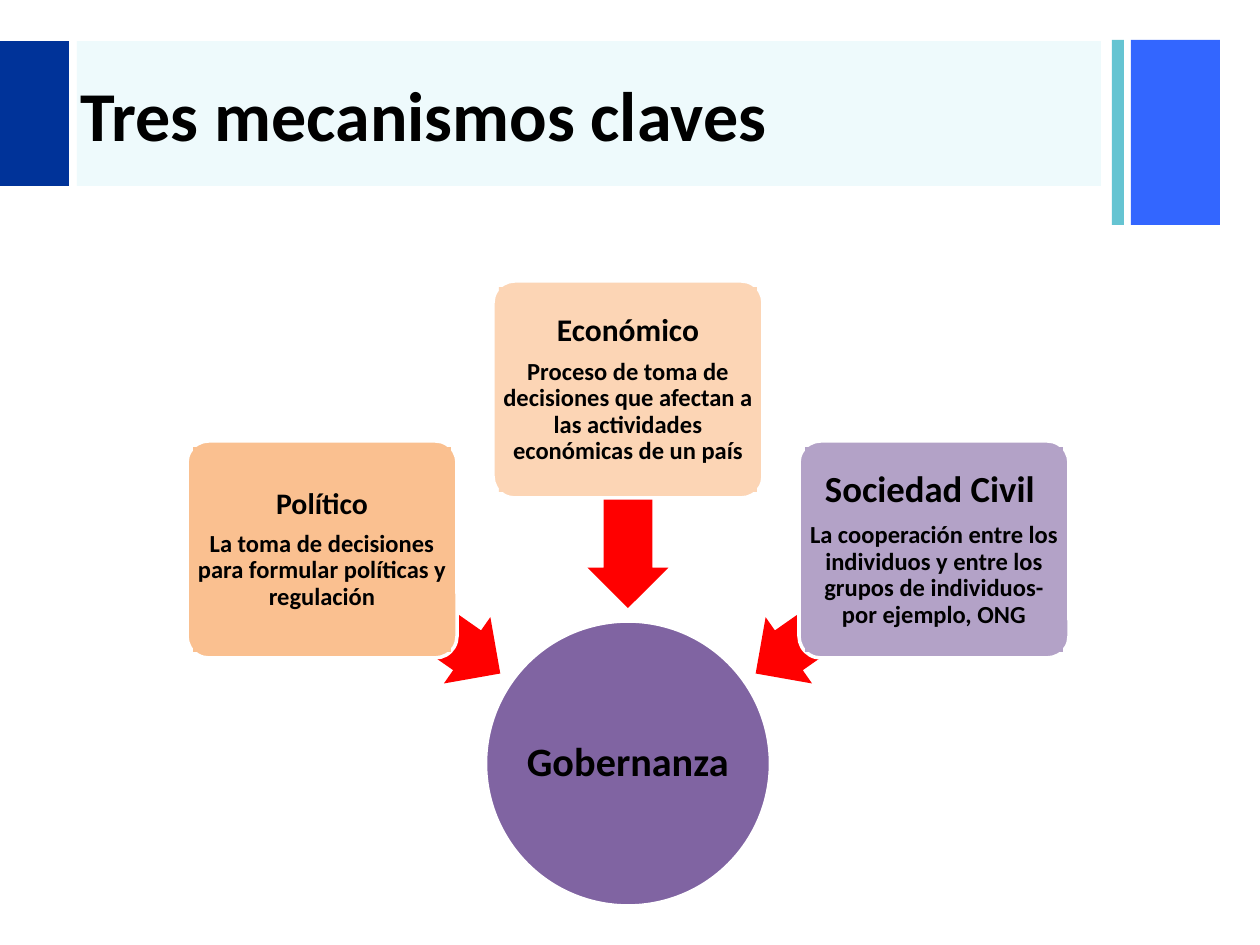
from pptx import Presentation
from pptx.dml.color import RGBColor
from pptx.enum.shapes import MSO_SHAPE
from pptx.enum.text import MSO_ANCHOR, PP_ALIGN
from pptx.util import Emu, Pt

EMU_PER_PX = 914400 / 126
FONT = "Calibri"
COLORS = {
    "text": "000000", "outline": "FFFFFF",
    "navy": "003399", "pale": "EEFAFC", "teal": "65C4D2", "blue": "3366FF",
    "arrow": "FF0000", "circle": "8064A2",
    "orange": "FAC090", "peach": "FCD5B5", "lilac": "B3A2C7",
}

# Decorative header: left, top, width, height, colour
HEADER_BARS = [
    (1131, 40, 89, 185, "blue"),
    (1112, 40, 12, 185, "teal"),
    (77, 41, 1024, 145, "pale"),
    (0, 41, 69, 145, "navy"),
]

# Every mechanism is placed around the vertical axis of the circle
AXIS = 628
CARD_W, CARD_H, CARD_INSET = 270, 217, 6
ARROW_W, ARROW_H = 218, 81
CIRCLE_TOP, CIRCLE_SIZE, LABEL_INSET = 621, 285, 36

# Card offset, card top, colour, arrow offset, arrow middle, rotation,
# margin, heading, heading size, description
MECHANISMS = [
    (-306, 441, "orange", -217, 611, 215, 4, "Político", 17,
     "La toma de decisiones para formular políticas y regulación"),
    (0, 281, "peach", 0, 499, 270, 0, "Económico", 18,
     "Proceso de toma de decisiones que afectan a las actividades "
     "económicas de un país"),
    (306, 441, "lilac", 217, 611, 325, 4, "Sociedad Civil ", 21,
     "La cooperación entre los individuos y entre los grupos de "
     "individuos-por ejemplo, ONG"),
]


def px(length):
    return Emu(round(length * EMU_PER_PX))


def rgb(name):
    return RGBColor.from_string(COLORS[name])


def add_block(slide, kind, left, top, width, height, color, outlined=False):
    block = slide.shapes.add_shape(kind, px(left), px(top), px(width), px(height))
    block.shadow.inherit = False
    block.fill.solid()
    block.fill.fore_color.rgb = rgb(color)
    if outlined:
        block.line.color.rgb = rgb("outline")
        block.line.width = Pt(2)
    else:
        block.line.fill.background()
    return block


def style_font(paragraph, size):
    paragraph.font.name = FONT
    paragraph.font.size = Pt(size)
    paragraph.font.bold = True
    paragraph.font.color.rgb = rgb("text")


def write_centred(holder, lines, margin):
    frame = holder.text_frame
    frame.word_wrap = True
    frame.vertical_anchor = MSO_ANCHOR.MIDDLE
    frame.margin_left = frame.margin_right = px(margin)
    frame.margin_top = frame.margin_bottom = px(margin)
    for index, (text, size) in enumerate(lines):
        paragraph = frame.add_paragraph() if index else frame.paragraphs[0]
        paragraph.text = text
        paragraph.alignment = PP_ALIGN.CENTER
        paragraph.line_spacing = 0.9
        paragraph.space_after = Pt(round(size * 0.35, 1))
        style_font(paragraph, size)


def add_header(slide):
    for *box, color in HEADER_BARS:
        add_block(slide, MSO_SHAPE.RECTANGLE, *box, color)

    title = slide.shapes.title
    title.left, title.top, title.width, title.height = map(px, (68, 43, 1042, 141))
    title.text_frame.text = "Tres mecanismos claves"
    title.text_frame.vertical_anchor = MSO_ANCHOR.MIDDLE
    heading = title.text_frame.paragraphs[0]
    heading.alignment = PP_ALIGN.LEFT
    style_font(heading, 40)
    # Bring the title in front of the header bars
    slide.shapes._spTree.append(title._element)


def add_circle(slide):
    left = AXIS - CIRCLE_SIZE / 2
    add_block(slide, MSO_SHAPE.OVAL, left, CIRCLE_TOP, CIRCLE_SIZE, CIRCLE_SIZE,
              "circle", outlined=True)
    side = CIRCLE_SIZE - 2 * LABEL_INSET
    label = slide.shapes.add_textbox(px(left + LABEL_INSET),
                                     px(CIRCLE_TOP + LABEL_INSET),
                                     px(side), px(side))
    write_centred(label, [("Gobernanza", 23)], 2)


def add_arrow(slide, center, middle, rotation):
    arrow = add_block(slide, MSO_SHAPE.LEFT_ARROW, center - ARROW_W / 2,
                      middle - ARROW_H / 2, ARROW_W, ARROW_H, "arrow")
    arrow.adjustments[0] = 0.6
    arrow.adjustments[1] = 0.5
    arrow.rotation = rotation


def add_card(slide, center, top, color, lines, margin):
    left = center - CARD_W / 2
    card = add_block(slide, MSO_SHAPE.ROUNDED_RECTANGLE, left, top,
                     CARD_W, CARD_H, color, outlined=True)
    card.adjustments[0] = 0.1
    panel = add_block(slide, MSO_SHAPE.RECTANGLE, left + CARD_INSET, top + CARD_INSET,
                      CARD_W - 2 * CARD_INSET, CARD_H - 2 * CARD_INSET, color)
    write_centred(panel, lines, margin)


def main():
    deck = Presentation()
    deck.slide_width, deck.slide_height = px(1260), px(945)
    slide = deck.slides.add_slide(deck.slide_layouts[5])

    add_header(slide)
    add_circle(slide)
    # Each arrow lies behind its card
    for (card_dx, top, color, arrow_dx, middle, rotation,
         margin, heading, size, description) in MECHANISMS:
        add_arrow(slide, AXIS + arrow_dx, middle, rotation)
        add_card(slide, AXIS + card_dx, top, color,
                 [(heading, size), (description, 14)], margin)

    deck.save("out.pptx")


if __name__ == "__main__":
    main()
